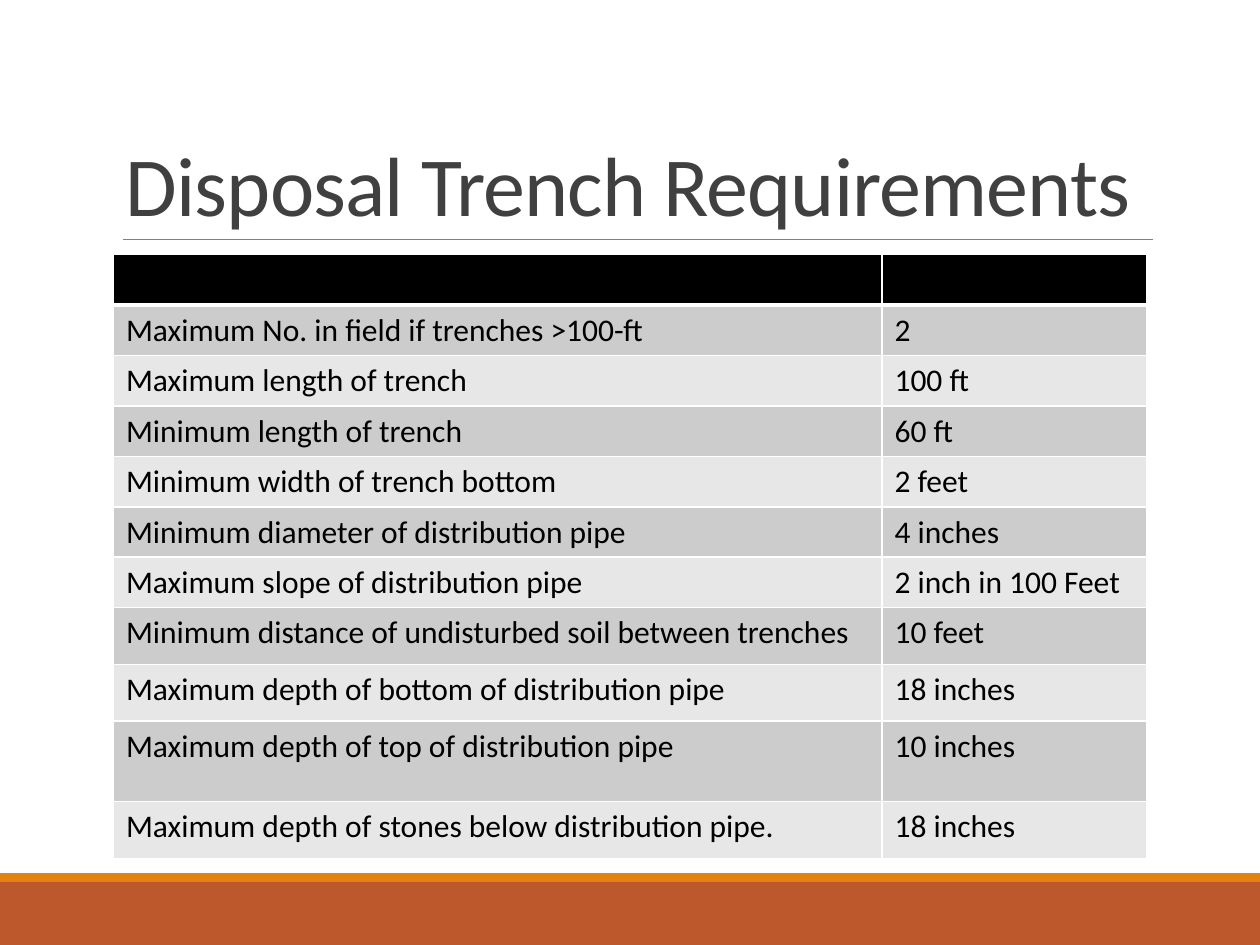
from lxml import etree
from pptx import Presentation
from pptx import util as u
from pptx.dml.color import RGBColor
from pptx.enum import shapes, text
from pptx.oxml.ns import qn

WIDE, HIGH = 10, 7.5
TITLE = "Disposal Trench Requirements"
# requirement, limit, row height
ROWS = [
    ("", "", 0.39),
    ("Maximum No. in field if trenches >100-ft", "2", 0.39),
    ("Maximum length of trench", "100 ft", 0.39),
    ("Minimum length of trench", "60 ft", 0.39),
    ("Minimum width of trench bottom", "2 feet", 0.39),
    ("Minimum diameter of distribution pipe", "4 inches", 0.39),
    ("Maximum slope of distribution pipe", "2 inch in 100 Feet", 0.39),
    ("Minimum distance of undisturbed soil between trenches", "10 feet", 0.45),
    ("Maximum depth of bottom of distribution pipe", "18 inches", 0.45),
    ("Maximum depth of top of distribution pipe", "10 inches", 0.64),
    ("Maximum depth of stones below distribution pipe.", "18 inches", 0.45),
]
COLS = (6.1, 2.1)
HEAD, BANDS = "000000", ("E7E7E7", "CCCCCC")
STRIPS = [(7, 0.5, "BD582C"), (6.93, 0.07, "E48312")]  # top, height, fill
LEFT = 0.9


def paint(fill, color):
    fill.solid()
    fill.fore_color.rgb = RGBColor.from_string(color)


def write(para, words, size, color):
    run = para.add_run()
    run.text = words
    run.font.name = "Calibri"
    run.font.size = u.Pt(size)
    run.font.color.rgb = RGBColor.from_string(color)
    return run


def edge(cell, side, width):
    """Draw a white border on one side of a cell."""
    line = etree.SubElement(cell._tc.get_or_add_tcPr(), qn("a:ln" + side),
                            w=str(u.Pt(width)))
    fill = etree.SubElement(line, qn("a:solidFill"))
    etree.SubElement(fill, qn("a:srgbClr"), val="FFFFFF")


deck = Presentation()
deck.slide_width, deck.slide_height = u.Inches(WIDE), u.Inches(HIGH)
slide = deck.slides.add_slide(deck.slide_layouts[6])

for top, tall, color in STRIPS:
    strip = slide.shapes.add_shape(shapes.MSO_SHAPE.RECTANGLE, 0, u.Inches(top),
                                   u.Inches(WIDE), u.Inches(tall))
    strip.shadow.inherit = False
    paint(strip.fill, color)
    strip.line.fill.background()

rule = slide.shapes.add_connector(shapes.MSO_CONNECTOR.STRAIGHT, u.Inches(0.98),
                                  u.Inches(1.9), u.Inches(9.15), u.Inches(1.9))
rule.line.color.rgb = RGBColor.from_string("808080")
rule.line.width = u.Pt(0.5)
etree.SubElement(rule._element.spPr, qn("a:effectLst"))

box = slide.shapes.add_textbox(u.Inches(LEFT), u.Inches(0.31),
                               u.Inches(8.25), u.Inches(1.59))
frame = box.text_frame
frame.word_wrap = True
frame.vertical_anchor = text.MSO_ANCHOR.BOTTOM
para = frame.paragraphs[0]
para.line_spacing = 0.85
run = write(para, TITLE, 48, "404040")
run.font._element.set("spc", "-50")

table = slide.shapes.add_table(
    len(ROWS), len(COLS), u.Inches(LEFT), u.Inches(2.02), u.Inches(sum(COLS)),
    u.Inches(sum(row[-1] for row in ROWS))).table
for col, wide in zip(table.columns, COLS):
    col.width = u.Inches(wide)
for r, (*words, tall) in enumerate(ROWS):
    table.rows[r].height = u.Inches(tall)
    for c, word in enumerate(words):
        cell = table.cell(r, c)
        for side in "LRTB":
            heavy = (r, side) in ((0, "B"), (1, "T"))
            edge(cell, side, 3 if heavy else 1)
        paint(cell.fill, BANDS[r % 2] if r else HEAD)
        if word:
            write(cell.text_frame.paragraphs[0], word, 18, "000000")

deck.save("out.pptx")
